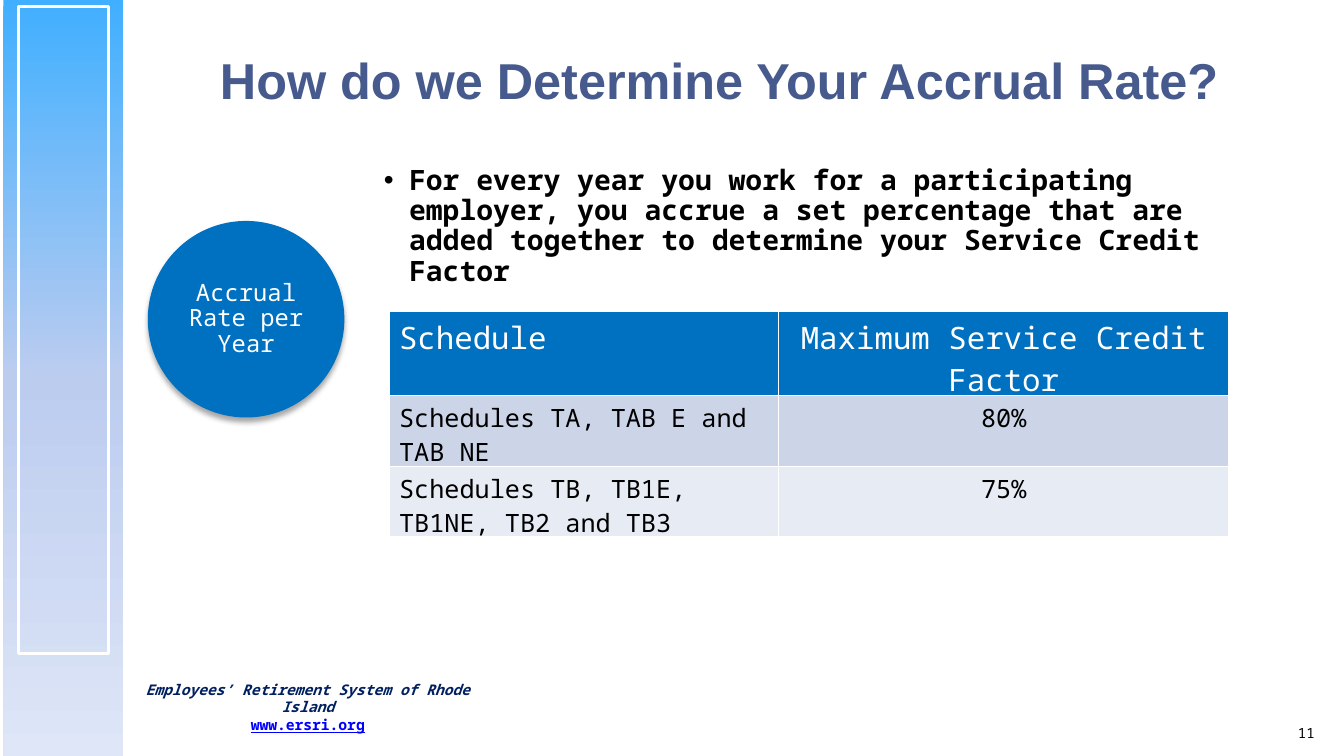
from lxml.etree import SubElement
from pptx import Presentation
from pptx.dml.color import RGBColor
from pptx.enum.shapes import MSO_SHAPE
from pptx.enum.text import MSO_ANCHOR, PP_ALIGN
from pptx.oxml import parse_xml
from pptx.oxml.ns import nsdecls, qn
from pptx.util import Inches, Pt

MONO = "Noto Sans Mono"
BLUE, WHITE, BLACK = "0070C0", "FFFFFF", "000000"

prs = Presentation()
prs.slide_width, prs.slide_height = Inches(13.33), Inches(7.5)
s = prs.slides.add_slide(prs.slide_layouts[6])
COL, ROW = prs.slide_width / 160, prs.slide_height / 90


def grid(x, y, w, h):
    """Turn columns and rows of the 160 by 90 grid into lengths."""
    return int(x * COL), int(y * ROW), int(w * COL), int(h * ROW)


def style(p, size, color, font=MONO, align=PP_ALIGN.LEFT, bold=False, italic=False):
    p.alignment = align
    for r in p.runs:
        r.font.size, r.font.name = Pt(size), font
        r.font.bold, r.font.italic = bold, italic
        r.font.color.rgb = RGBColor.from_string(color)


# Side band with its white frame
band = s.shapes.add_shape(MSO_SHAPE.RECTANGLE, *grid(0.4, 0, 14.3, 90))
band.shadow.inherit = False
band.line.fill.background()
stops = "".join(
    f'<a:gs pos="{share * 1000}"><a:srgbClr val="{color}"/></a:gs>'
    for share, color in [(0, "40AFFF"), (50, "BCCCEF"), (100, "DEE6F7")])
band._element.spPr.find(qn("a:prstGeom")).addnext(parse_xml(
    f'<a:gradFill {nsdecls("a")}><a:gsLst>{stops}</a:gsLst>'
    '<a:lin ang="5400000" scaled="0"/></a:gradFill>'))

frame = s.shapes.add_shape(MSO_SHAPE.RECTANGLE, *grid(2.2, 0.8, 10.7, 77))
frame.shadow.inherit = False
frame.fill.background()
frame.line.color.rgb = RGBColor.from_string(WHITE)
frame.line.width = Pt(1.75)

# Text boxes: place, anchor, text
texts = [
    ((25, 3, 126.4, 12.8), MSO_ANCHOR.MIDDLE, "How do we Determine Your Accrual Rate?"),
    ((43.8, 19.2, 107.5, 12.2), MSO_ANCHOR.TOP,
     "For every year you work for a participating employer, you accrue a set "
     "percentage that are added together to determine your Service Credit Factor"),
    ((16, 80.4, 41.3, 7.6), MSO_ANCHOR.TOP,
     "Employees’ Retirement System of Rhode Island\nwww.ersri.org"),
    ((151.3, 84.1, 6.4, 4.8), MSO_ANCHOR.BOTTOM, "11"),
]
frames = []
for place, anchor, text in texts:
    tf = s.shapes.add_textbox(*grid(*place)).text_frame
    tf.word_wrap, tf.vertical_anchor, tf.text = True, anchor, text
    frames.append(tf)
title, body, footer, number = frames

style(title.paragraphs[0], 36, "475A8D", "Arial", bold=True)
style(number.paragraphs[0], 10, BLACK, align=PP_ALIGN.RIGHT)

name, site = footer.paragraphs
style(name, 10.5, "002060", align=PP_ALIGN.CENTER, bold=True, italic=True)
style(site, 10.5, "0000FF", align=PP_ALIGN.CENTER, bold=True)
site.runs[0].font.underline = True

p = body.paragraphs[0]
pPr = p._p.get_or_add_pPr()
pPr.set("marL", str(Inches(0.31)))
pPr.set("indent", str(Inches(-0.25)))
SubElement(pPr, qn("a:buFont"), typeface="Arial")
SubElement(pPr, qn("a:buChar"), char="•")
p.line_spacing, p.space_after = 0.9, Pt(6)
style(p, 20, BLACK, bold=True)

# Schedule table
rows = [
    ("Schedule", "Maximum Service Credit Factor", 22, WHITE, BLUE),
    ("Schedules TA, TAB E and TAB NE", "80%", 18, BLACK, "CCD5E8"),
    ("Schedules TB, TB1E, TB1NE, TB2 and TB3", "75%", 18, BLACK, "E7EBF4"),
]
widths = [46.4, 53.6]
table = s.shapes.add_table(
    len(rows), len(widths), *grid(46.3, 37.1, sum(widths), 6.8 * len(rows))).table
for column, width in zip(table.columns, widths):
    column.width = int(width * COL)
for i, (schedule, factor, size, color, fill) in enumerate(rows):
    for j, (text, align) in enumerate([(schedule, PP_ALIGN.LEFT), (factor, PP_ALIGN.CENTER)]):
        cell = table.cell(i, j)
        cell.text = text
        style(cell.text_frame.paragraphs[0], size, color, align=align)
        tcPr = cell._tc.get_or_add_tcPr()
        for side in ("lnL", "lnR", "lnT", "lnB"):
            tcPr.append(parse_xml(
                f'<a:{side} {nsdecls("a")} w="{Pt(1)}"><a:solidFill>'
                f'<a:srgbClr val="{WHITE}"/></a:solidFill></a:{side}>'))
        cell.fill.solid()
        cell.fill.fore_color.rgb = RGBColor.from_string(fill)

# Accrual rate circle
circle = s.shapes.add_shape(MSO_SHAPE.OVAL, *grid(17.6, 26.3, 23.4, 23.4))
circle.fill.solid()
circle.fill.fore_color.rgb = RGBColor.from_string(BLUE)
circle.line.fill.background()
circle._element.spPr.append(parse_xml(
    f'<a:effectLst {nsdecls("a")}><a:outerShdw blurRad="{Pt(4)}" dist="{Pt(3)}" '
    f'dir="5400000" rotWithShape="0"><a:srgbClr val="{BLACK}"><a:alpha val="35000"/>'
    '</a:srgbClr></a:outerShdw></a:effectLst>'))
tf = circle.text_frame
tf.word_wrap, tf.vertical_anchor = True, MSO_ANCHOR.MIDDLE
tf.margin_left = tf.margin_right = tf.margin_top = tf.margin_bottom = Inches(0.02)
tf.text = "Accrual Rate per Year"
tf.paragraphs[0].line_spacing = 0.9
style(tf.paragraphs[0], 17, WHITE, align=PP_ALIGN.CENTER)

prs.save("out.pptx")
